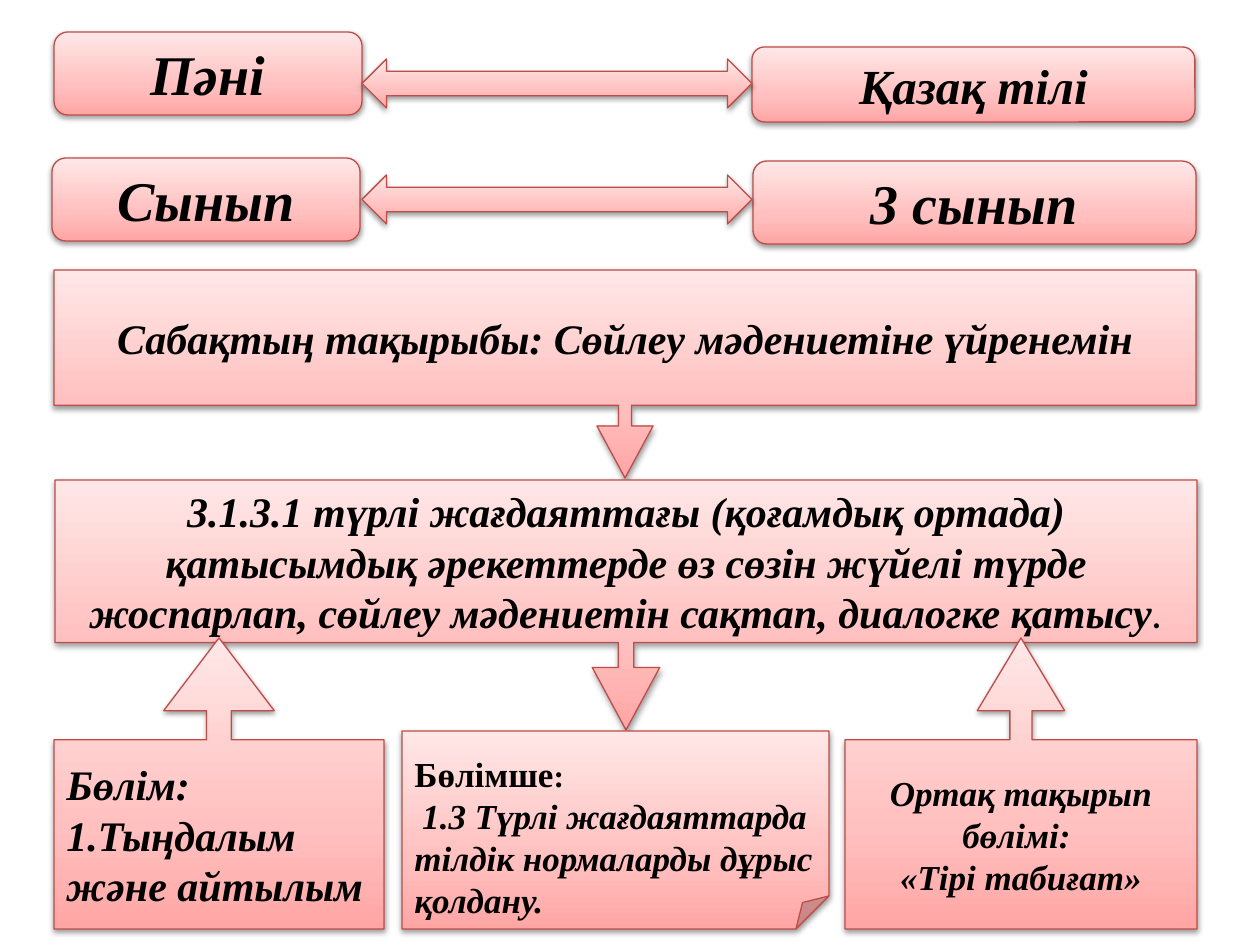
import copy

import pptx
import pptx.dml.color
import pptx.enum.shapes
import pptx.enum.text
import pptx.util
from lxml import etree
import pptx.oxml

PX = 914400 / 126
SHAPE = pptx.enum.shapes.MSO_SHAPE
ALIGN = pptx.enum.text.PP_ALIGN
ANCHOR = pptx.enum.text.MSO_ANCHOR


class Theme:
    """Colours, fonts and type sizes of the slide."""
    stops = ((0, "FFA6A5"), (0.35, "FFC0BF"), (1, "FFE7E7"))
    line = "BF4C48"
    text = "000000"
    font = "Times New Roman"
    point_font = "Calibri"
    title, subject, body, note, small = 32, 28, 24, 20, 18


def px(n):
    """Turn px into EMU."""
    return pptx.util.Emu(round(n * PX))


def rgb(value):
    """Make a colour from its hex value."""
    return pptx.dml.color.RGBColor.from_string(value)


def add_shadow(s):
    """Give a shape a soft shadow below it."""
    s.shadow.inherit = False
    effects = s._element.spPr.find(pptx.oxml.ns.qn("a:effectLst"))
    effects.append(pptx.oxml.parse_xml(
        f'<a:outerShdw {pptx.oxml.ns.nsdecls("a")} blurRad="40000" dist="20000" '
        'dir="5400000" rotWithShape="0"><a:srgbClr val="000000">'
        '<a:alpha val="38000"/></a:srgbClr></a:outerShdw>'))


def paint(s):
    """Apply the gradient, outline and shadow."""
    s.fill.gradient()
    s.fill.gradient_angle = 90
    stop_list = s._element.spPr.find(".//" + pptx.oxml.ns.qn("a:gsLst"))
    stop_list.append(copy.deepcopy(stop_list[-1]))
    for stop, (position, colour) in zip(s.fill.gradient_stops, Theme.stops):
        stop.position = position
        stop.color.rgb = rgb(colour)
    s.line.color.rgb = rgb(Theme.line)
    s.line.width = pptx.util.Pt(0.75)
    add_shadow(s)


def add_run(p, text, size, **formats):
    """Add a bold italic run, with any formats changed."""
    r = p.add_run()
    r.text = text
    r.font.size = pptx.util.Pt(size)
    r.font.color.rgb = rgb(Theme.text)
    for name, value in {"name": Theme.font, "bold": True, "italic": True, **formats}.items():
        setattr(r.font, name, value)


def add_block(slide, kind, box, paragraphs=(), align=ALIGN.CENTER, adjustments=()):
    """Add a painted shape with paragraphs of runs."""
    s = slide.shapes.add_shape(kind, *map(px, box))
    for i, value in enumerate(adjustments):
        s.adjustments[i] = value
    paint(s)
    tf = s.text_frame
    tf.word_wrap = True
    tf.vertical_anchor = ANCHOR.MIDDLE
    for i, runs in enumerate(paragraphs):
        p = tf.add_paragraph() if i else tf.paragraphs[0]
        p.alignment = align
        for text, size, formats in runs:
            add_run(p, text, size, **formats)
    return s


def add_pair(slide, label, value, arrow_top):
    """Add a label and its value joined by a double arrow."""
    for box, text, size in (label, value):
        add_block(slide, SHAPE.ROUNDED_RECTANGLE, box, [[(text, size, {})]])
    add_block(slide, SHAPE.LEFT_RIGHT_ARROW, (362, arrow_top, 390, 49))


def add_callout(slide, kind, box, paragraphs, shaft, head, align=ALIGN.CENTER):
    """Add an arrow callout with its shaft and head widths."""
    add_block(slide, kind, box, paragraphs, align, (shaft, head, 0.25, 0.65))


def add_subsection(slide):
    """Add the folded note naming the subsection."""
    upright = {"italic": False}
    s = add_block(slide, SHAPE.FOLDED_CORNER, (402, 731, 427, 198), [
        [("Бөлімше", Theme.note, upright), (":", Theme.small, upright)],
        [(" ", Theme.small, upright),
         ("1.3 Түрлі жағдаяттарда тілдік нормаларды дұрыс қолдану.", Theme.note, {})],
    ], ALIGN.LEFT)
    tf = s.text_frame
    tf.vertical_anchor = ANCHOR.TOP
    tf.margin_top, tf.margin_bottom = px(21), 0


def main():
    """Build the lesson overview slide."""
    prs = pptx.Presentation()
    prs.slide_width, prs.slide_height = px(1260), px(945)
    slide = prs.slides.add_slide(prs.slide_layouts[6])

    add_pair(slide, ((54, 32, 308, 83), "Пәні", Theme.title),
             ((752, 47, 443, 75), "Қазақ тілі", Theme.subject), 59)
    add_pair(slide, ((52, 158, 308, 83), "Сынып", Theme.title),
             ((753, 161, 443, 83), "3 сынып", Theme.title), 175)

    down, up = SHAPE.DOWN_ARROW_CALLOUT, SHAPE.UP_ARROW_CALLOUT
    add_callout(slide, down, (54, 270, 1142, 208), [
        [("Сабақтың тақырыбы: Сөйлеу мәдениетіне үйренемін", Theme.body, {})],
    ], 0.062, 0.135)
    add_callout(slide, down, (55, 480, 1142, 250), [
        [("3.1.3.1 түрлі жағдаяттағы (қоғамдық ортада) қатысымдық әрекеттерде "
          "өз сөзін жүйелі түрде жоспарлап, сөйлеу мәдениетін сақтап, "
          "диалогке қатысу", Theme.body, {}),
         (".", Theme.body, {"name": Theme.point_font, "bold": False})],
    ], 0.062, 0.135)
    add_callout(slide, up, (54, 638, 330, 291), [
        [("Бөлім: 1.Тыңдалым және айтылым", Theme.body, {})],
    ], 0.085, 0.19, ALIGN.LEFT)
    add_callout(slide, up, (845, 638, 352, 291), [
        [("Ортақ тақырып бөлімі: ", Theme.note, {})],
        [("«Тірі табиғат»", Theme.note, {})],
    ], 0.076, 0.15)
    add_subsection(slide)

    prs.save("out.pptx")


if __name__ == "__main__":
    main()
